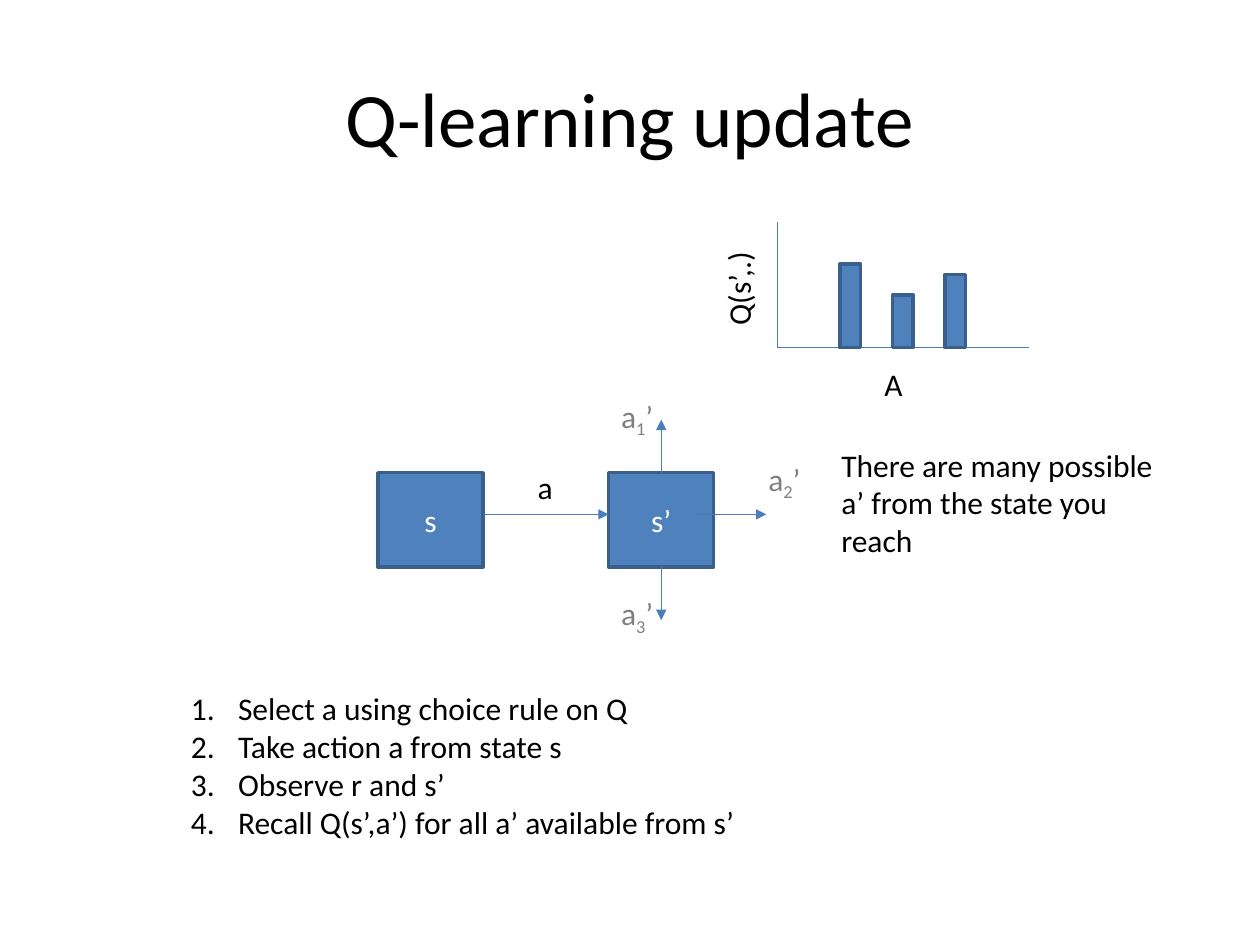
"""Build the Q-learning update slide: state diagram, action values and steps."""
from lxml.etree import SubElement
from pptx import Presentation
from pptx.dml.color import RGBColor
from pptx.enum.shapes import MSO_CONNECTOR, MSO_SHAPE
from pptx.enum.text import MSO_ANCHOR, PP_ALIGN
from pptx.oxml.ns import qn
from pptx.util import Cm, Pt

BLACK = RGBColor(0x00, 0x00, 0x00)
WHITE = RGBColor(0xFF, 0xFF, 0xFF)
GRAY = RGBColor(0x80, 0x80, 0x80)
BLUE = RGBColor(0x4F, 0x81, 0xBD)
OUTLINE = RGBColor(0x3A, 0x5F, 0x8C)
LINE = RGBColor(0x4A, 0x7E, 0xBB)
FONT = "Calibri"

TITLE = "Q-learning update"
STEPS = [
    "Select a using choice rule on Q",
    "Take action a from state s",
    "Observe r and s’",
    "Recall Q(s’,a’) for all a’ available from s’",
]
NOTE = "There are many possible a’ from the state you reach"
STATES = [("s", 7.62), ("s’", 12.27)]
STATE_TOP, STATE_WIDTH, STATE_HEIGHT = 9.53, 2.12, 1.9
ACTIONS = [("1", 12.27, 7.87), ("2", 15.24, 9.14), ("3", 12.27, 11.86)]
ARROW_Y, ARROW_LENGTH = 10.37, 1.07
BAR_HEIGHTS = [1.69, 1.06, 1.48]
BAR_LEFT, BAR_STEP, BAR_WIDTH = 16.93, 1.06, 0.42
ORIGIN_X, ORIGIN_Y = 15.67, 7.01
AXIS_WIDTH, AXIS_HEIGHT = 5.08, 2.54


def format_runs(paragraph, color, size=18):
    for run in paragraph.runs:
        run.font.name = FONT
        run.font.size = Pt(size)
        run.font.color.rgb = color


def add_text(slide, lines, left, top, width, height, wrap=False):
    box = slide.shapes.add_textbox(Cm(left), Cm(top), Cm(width), Cm(height))
    box.text_frame.word_wrap = wrap
    box.text_frame.text = "\n".join(lines)
    for paragraph in box.text_frame.paragraphs:
        format_runs(paragraph, BLACK)
    return box


def add_block(slide, left, top, width, height, text=""):
    shape = slide.shapes.add_shape(
        MSO_SHAPE.RECTANGLE, Cm(left), Cm(top), Cm(width), Cm(height))
    shape.shadow.inherit = False
    shape.fill.solid()
    shape.fill.fore_color.rgb = BLUE
    shape.line.color.rgb = OUTLINE
    shape.line.width = Pt(2)
    if text:
        shape.text_frame.text = text
        shape.text_frame.vertical_anchor = MSO_ANCHOR.MIDDLE
        paragraph = shape.text_frame.paragraphs[0]
        paragraph.alignment = PP_ALIGN.CENTER
        format_runs(paragraph, WHITE)


def add_line(slide, start_x, start_y, end_x, end_y, arrow=False):
    connector = slide.shapes.add_connector(
        MSO_CONNECTOR.STRAIGHT, Cm(start_x), Cm(start_y), Cm(end_x), Cm(end_y))
    connector.line.color.rgb = LINE
    connector.line.width = Pt(0.75)
    if arrow:
        SubElement(connector.line._get_or_add_ln(), qn("a:tailEnd"), type="triangle")
    SubElement(connector._element.spPr, qn("a:effectLst"))


def add_title(slide):
    title = slide.shapes.title
    title.left, title.top, title.width, title.height = Cm(1.27), Cm(0.76), Cm(22.86), Cm(3.18)
    title.text_frame.text = TITLE
    title.text_frame.vertical_anchor = MSO_ANCHOR.MIDDLE
    title.text_frame.paragraphs[0].alignment = PP_ALIGN.CENTER
    format_runs(title.text_frame.paragraphs[0], BLACK, 44)


def add_state_diagram(slide):
    for name, left in STATES:
        add_block(slide, left, STATE_TOP, STATE_WIDTH, STATE_HEIGHT, name)
    first_right = STATES[0][1] + STATE_WIDTH
    next_left = STATES[1][1]
    center = next_left + STATE_WIDTH / 2
    bottom = STATE_TOP + STATE_HEIGHT
    for ends in [
        (center, STATE_TOP, center, STATE_TOP - ARROW_LENGTH),
        (13.97, ARROW_Y, 15.45, ARROW_Y),
        (center, bottom, center, bottom + ARROW_LENGTH),
        (first_right, ARROW_Y, next_left, ARROW_Y),
    ]:
        add_line(slide, *ends, arrow=True)
    for index, left, top in ACTIONS:
        label = add_text(slide, ["a"], left, top, 1.27, 1.88)
        paragraph = label.text_frame.paragraphs[0]
        subscript = paragraph.add_run()
        subscript.text = index
        paragraph.add_run().text = "’"
        format_runs(paragraph, GRAY)
        subscript.font._element.set("baseline", "-25000")
    add_text(slide, ["a"], 10.59, 9.32, 0.84, 1.02)


def add_steps(slide):
    box = add_text(slide, STEPS, 3.6, 13.77, 15.24, 3.3, wrap=True)
    for paragraph in box.text_frame.paragraphs:
        properties = paragraph._p.get_or_add_pPr()
        properties.set("marL", str(Cm(0.95)))
        properties.set("indent", str(-Cm(0.95)))
        SubElement(properties, qn("a:buFont"), typeface="+mj-lt")
        SubElement(properties, qn("a:buAutoNum"), type="arabicPeriod")


def add_action_values(slide):
    add_line(slide, ORIGIN_X, ORIGIN_Y, ORIGIN_X + AXIS_WIDTH, ORIGIN_Y)
    add_line(slide, ORIGIN_X, ORIGIN_Y, ORIGIN_X, ORIGIN_Y - AXIS_HEIGHT)
    for index, height in enumerate(BAR_HEIGHTS):
        add_block(slide, BAR_LEFT + index * BAR_STEP, ORIGIN_Y - height, BAR_WIDTH, height)
    add_text(slide, ["Q(s’,.)"], 13.39, 4.8, 3, 1.02).rotation = 270
    add_text(slide, ["A"], 17.58, 7.24, 1.07, 1.02)


def main():
    presentation = Presentation()
    presentation.slide_width, presentation.slide_height = Cm(25.4), Cm(19.05)
    slide = presentation.slides.add_slide(presentation.slide_layouts[5])
    add_title(slide)
    add_state_diagram(slide)
    add_steps(slide)
    add_text(slide, [NOTE], 16.71, 8.86, 6.99, 2.54, wrap=True)
    add_action_values(slide)
    presentation.save("out.pptx")


if __name__ == "__main__":
    main()
